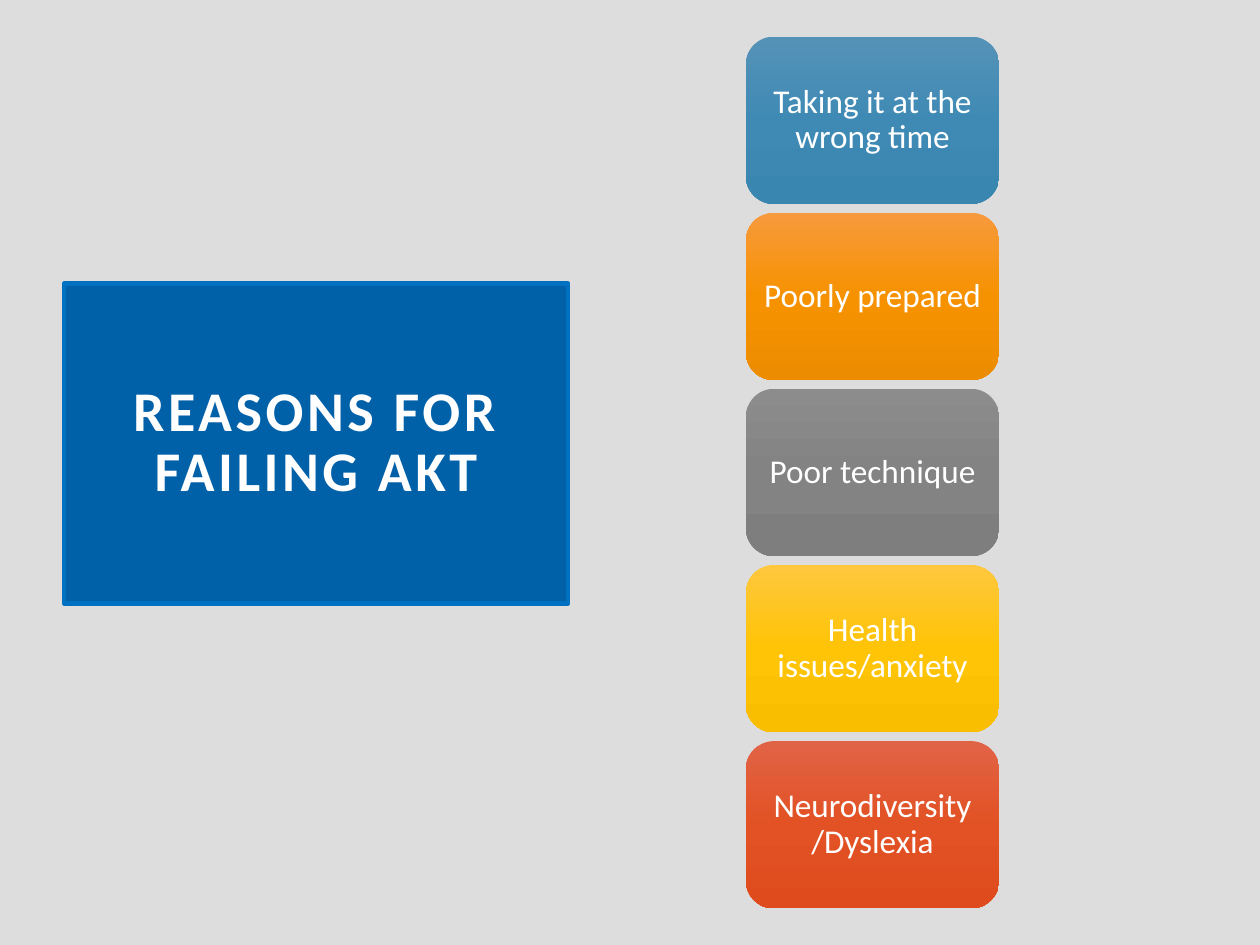
"""Build a slide listing the reasons for failing the AKT."""
import copy
from dataclasses import dataclass

import pptx
import pptx.dml.color
import pptx.enum.shapes
import pptx.enum.text
import pptx.util

Inches = pptx.util.Inches

TITLE = "REASONS FOR FAILING AKT"
REASONS = [
    ("Taking it at the wrong time", ("5592B7", "3F8AB5", "3986B1")),
    ("Poorly prepared", ("F79A3D", "F69200", "EC8C00")),
    ("Poor technique", ("8C8C8C", "838383", "7E7E7E")),
    ("Health issues/anxiety", ("FEC73E", "FFC405", "F9BE00")),
    ("Neurodiversity /Dyslexia", ("E16346", "E25224", "DF4B1D")),
]


@dataclass(frozen=True)
class Theme:
    background: str = "DDDDDD"
    panel: str = "0060A8"
    border: str = "0070C0"
    text: str = "FFFFFF"
    font: str = "Calibri"
    title_size: int = 32
    reason_size: int = 19


THEME = Theme()
WIDTH, HEIGHT = 10, 7.5
PANEL = (0.51, 2.25, 4, 2.54)
COLUMN_LEFT, COLUMN_WIDTH = 5.92, 2.01
MARGIN, GAP = 0.29, 0.07


def rgb(value):
    """Turn a hex string into a colour."""
    return pptx.dml.color.RGBColor.from_string(value)


def write(shape, text, size, insets, bold=False, spacing=0):
    """Put centred, formatted text in a shape."""
    frame = shape.text_frame
    frame.word_wrap = True
    frame.auto_size = pptx.enum.text.MSO_AUTO_SIZE.NONE
    frame.vertical_anchor = pptx.enum.text.MSO_ANCHOR.MIDDLE
    frame.margin_left = frame.margin_right = Inches(insets[0])
    frame.margin_top = frame.margin_bottom = Inches(insets[1])
    paragraph = frame.paragraphs[0]
    paragraph.alignment = pptx.enum.text.PP_ALIGN.CENTER
    paragraph.line_spacing = 0.9
    run = paragraph.add_run()
    run.text = text
    run.font.name = THEME.font
    run.font.size = pptx.util.Pt(size)
    run.font.bold = bold
    run.font.color.rgb = rgb(THEME.text)
    if spacing:
        run.font._element.set("spc", str(spacing * 100))


def shade(fill, colours):
    """Fill from top to bottom with evenly spaced colours."""
    fill.gradient()
    fill.gradient_angle = 270
    first = fill.gradient_stops[0]._gs
    for _ in colours[2:]:
        first.addnext(copy.deepcopy(first))
    for index, (stop, colour) in enumerate(zip(fill.gradient_stops, colours)):
        stop.position = index / (len(colours) - 1)
        stop.color.rgb = rgb(colour)


def add_title(slide):
    """Format the title placeholder as a bordered panel."""
    title = slide.shapes.title
    title.left, title.top, title.width, title.height = map(Inches, PANEL)
    title.fill.solid()
    title.fill.fore_color.rgb = rgb(THEME.panel)
    title.line.color.rgb = rgb(THEME.border)
    title.line.width = pptx.util.Pt(2.5)
    write(title, TITLE, THEME.title_size, (0.2, 0.2), bold=True, spacing=2)


def add_reasons(slide):
    """Stack the reason cards at equal gaps."""
    count = len(REASONS)
    card_height = (HEIGHT - 2 * MARGIN - (count - 1) * GAP) / count
    for row, (reason, colours) in enumerate(REASONS):
        top = MARGIN + row * (card_height + GAP)
        card = slide.shapes.add_shape(
            pptx.enum.shapes.MSO_SHAPE.ROUNDED_RECTANGLE,
            *map(Inches, (COLUMN_LEFT, top, COLUMN_WIDTH, card_height)))
        card.shadow.inherit = False
        card.line.fill.background()
        shade(card.fill, colours)
        write(card, reason, THEME.reason_size, (0.08, 0.04))


def main():
    """Build and save the presentation."""
    deck = pptx.Presentation()
    deck.slide_width, deck.slide_height = Inches(WIDTH), Inches(HEIGHT)
    slide = deck.slides.add_slide(deck.slide_layouts[0])
    slide.background.fill.solid()
    slide.background.fill.fore_color.rgb = rgb(THEME.background)
    subtitle = slide.placeholders[1].element
    subtitle.getparent().remove(subtitle)
    add_title(slide)
    add_reasons(slide)
    deck.save("out.pptx")


if __name__ == "__main__":
    main()
